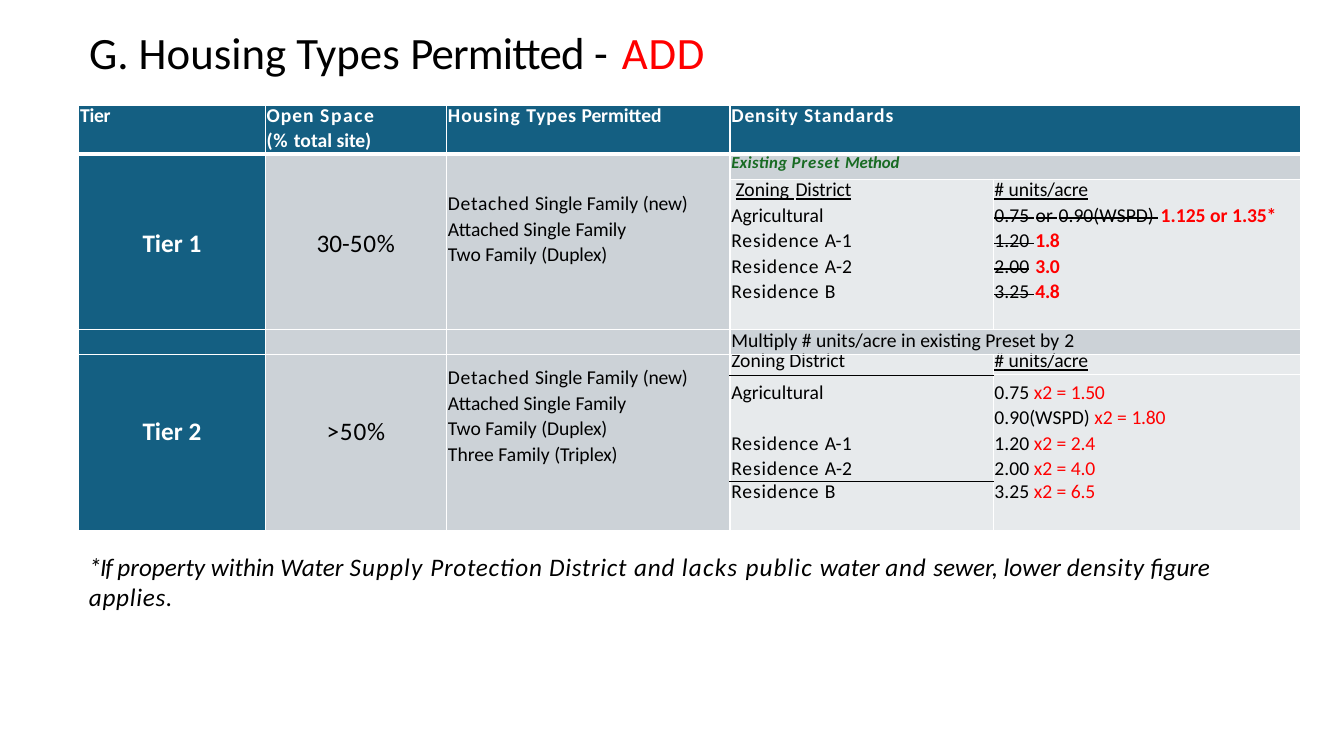
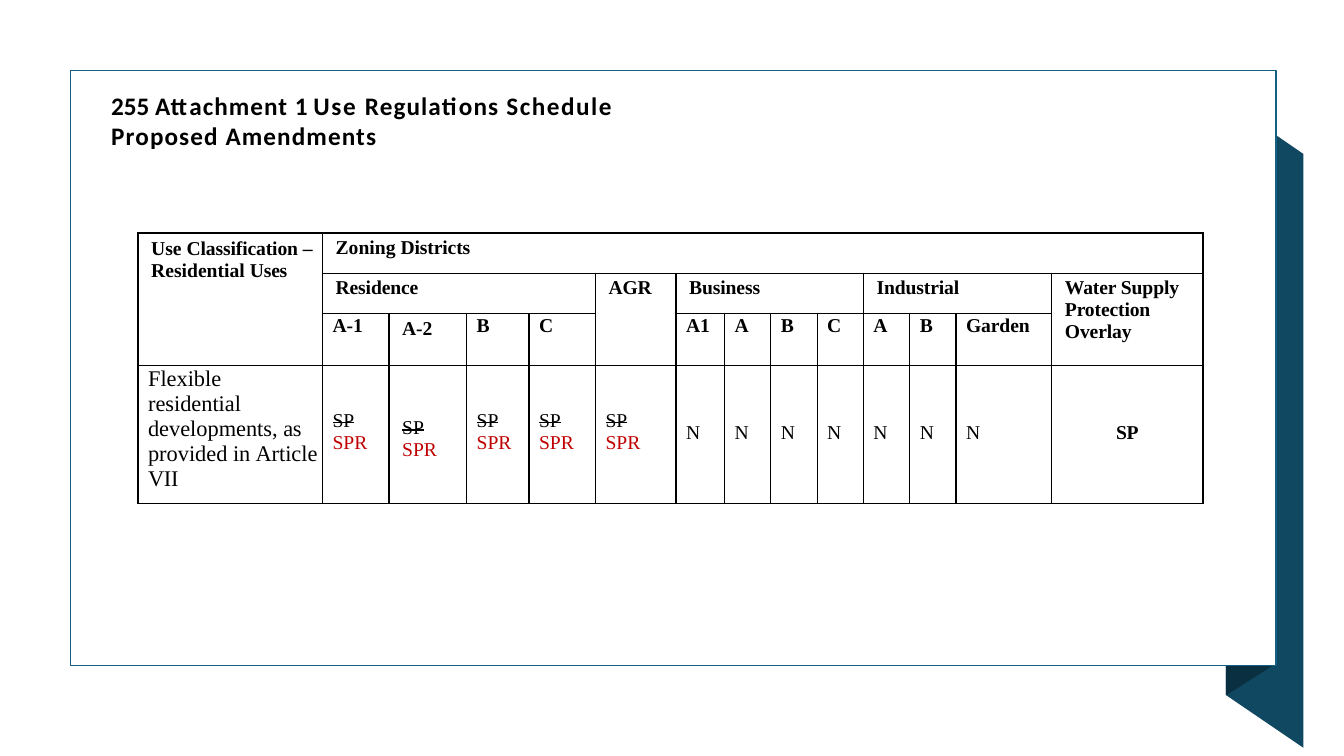
import dataclasses

import lxml.etree
import pptx
import pptx.dml.color
import pptx.enum.shapes
import pptx.enum.text
import pptx.oxml.ns
import pptx.util

Pt = pptx.util.Pt
qn = pptx.oxml.ns.qn


@dataclasses.dataclass(frozen=True)
class Theme:
    sans: str = "Calibri"
    serif: str = "Times New Roman"
    title: int = 32
    heading: int = 18
    label: int = 16
    body: int = 14
    small: int = 12
    black: str = "000000"
    white: str = "FFFFFF"
    red: str = "FF0000"
    crimson: str = "C00000"
    green: str = "186B23"
    teal: str = "145F82"
    ribbon: str = "104761"
    fold: str = "0A2F41"
    gray: str = "CCD2D7"
    pale: str = "E7EAEC"


THEME = Theme()
INKS = {"w": THEME.white, "r": THEME.red, "c": THEME.crimson, "g": THEME.green}


@dataclasses.dataclass
class Cell:
    lines: list
    size: float = THEME.body
    style: str = ""
    left: float = 1
    top: float = 0
    first: float = None
    pitch: float = None
    gap: float = 0
    indent: float = 0
    center: bool = False


def rgb(value):
    return pptx.dml.color.RGBColor.from_string(value)


def add_run(p, text, font, words, spacing=0, style=""):
    style = text.style + style
    r = p.add_run()
    r.text = words
    r.font.name = font
    r.font.size = Pt(text.size)
    r.font.bold = "b" in style
    r.font.italic = "i" in style
    r.font.underline = "u" in style
    r.font.color.rgb = rgb(next((INKS[k] for k in style if k in INKS), THEME.black))
    props = r._r.get_or_add_rPr()
    if spacing:
        props.set("spc", str(round(spacing * 100)))
    if "s" in style:
        props.set("strike", "sngStrike")


def write(tf, text, font):
    for i, line in enumerate(text.lines):
        p = tf.paragraphs[0] if i == 0 else tf.add_paragraph()
        pitch = text.pitch if i else text.first or text.pitch
        if pitch:
            p.line_spacing = Pt(pitch)
        if i == 1 and text.gap:
            p.space_before = Pt(text.gap)
        if i == 0 and text.indent:
            p._p.get_or_add_pPr().set("indent", str(Pt(text.indent)))
        if text.center:
            p.alignment = pptx.enum.text.PP_ALIGN.CENTER
        for run in line:
            add_run(p, text, font, *run)


def text_box(slide, box, text):
    sp = slide.shapes.add_textbox(*(Pt(v) for v in box))
    tf = sp.text_frame
    tf.word_wrap = True
    tf.margin_left, tf.margin_top = Pt(text.left), Pt(text.top)
    tf.margin_right = tf.margin_bottom = 0
    write(tf, text, THEME.sans)


def border(cell, edges):
    props = cell._tc.get_or_add_tcPr()
    for i, (side, (color, width)) in enumerate(zip("LRTB", edges)):
        ln = lxml.etree.Element(qn("a:ln" + side), w=str(Pt(width)))
        if width:
            fill = lxml.etree.SubElement(ln, qn("a:solidFill"))
            lxml.etree.SubElement(fill, qn("a:srgbClr"), val=color)
        else:
            lxml.etree.SubElement(ln, qn("a:noFill"))
        props.insert(i, ln)


def add_table(slide, left, top, widths, heights, cells, spans, font, fill, side, edge):
    table = slide.shapes.add_table(len(heights), len(widths), Pt(left), Pt(top),
                                   Pt(sum(widths)), Pt(sum(heights))).table
    table.first_row = table.horz_banding = False
    for col, width in zip(table.columns, widths):
        col.width = Pt(width)
    for row, height in zip(table.rows, heights):
        row.height = Pt(height)
    for (r, c), (down, across) in spans.items():
        table.cell(r, c).merge(table.cell(r + down - 1, c + across - 1))
    for r in range(len(heights)):
        for c in range(len(widths)):
            cell = table.cell(r, c)
            text = cells.get((r, c), Cell([]))
            cell.margin_left, cell.margin_top = Pt(text.left), Pt(text.top)
            cell.margin_right = cell.margin_bottom = 0
            color = fill(r, c)
            if color:
                cell.fill.solid()
                cell.fill.fore_color.rgb = rgb(color)
            else:
                cell.fill.background()
            down = spans.get((r, c), (1, 1))[0]
            border(cell, (side, side, edge(r, c), edge(r + down, c)))
            if text.lines:
                write(cell.text_frame, text, font)
            else:
                p = cell.text_frame.paragraphs[0]
                lxml.etree.SubElement(p._p, qn("a:endParaRPr"), sz="800")


def density_fill(r, c):
    if r == 0 or c == 0:
        return THEME.teal
    return THEME.gray if c < 3 or r in (1, 3) else THEME.pale


def density_edge(r, c):
    if r == 1:
        return THEME.white, 3
    if c == 3 and r in (5, 6):
        return THEME.black, 0.5
    return THEME.white, 0 if r == 6 else 1


def density_table(slide, left, top):
    exact, pitch = 16.2, 18.2
    detached = [("Detached ", 0.5), ("Single Family ",), ("(new)", -0.2)]
    attached = [("Attached Single ",), ("Family", -0.1)]
    duplex = [("Two Family ",), ("(Duplex)", -0.1)]
    triplex = [("Three Family ",), ("(Triplex)", -0.1)]
    res_a1 = [("Residence ", 0.6), ("A-", -0.3), ("1", -0.5)]
    res_a2 = [("Residence ", 0.6), ("A-",), ("2", -0.5)]
    res_b = [("Residence ", 0.6), ("B", 0.3)]
    units = [("# ", 0, "u"), ("units/acre", -0.1, "u")]

    def raised(old, new, gap="s"):
        return [(old, 0, "s"), (" ", 1.1, gap), (new, -0.2, "rb")]

    def doubled(old, new):
        return [(old + " ",), ("x2 = ", 0, "r"), (new, -0.2, "r")]

    heads = [
        [[("Tier", -0.2)]],
        [[("Open ", 0.7), ("Space", 1.1)], [("(% ", 0.6), ("total ",), ("site)", -0.1)]],
        [[("Housing ", 0.7), ("Types", 0.6), (" Permitted", -0.1)]],
        [[("Density ", 0.6), ("Standards", 0.7)]],
    ]
    cells = {(0, c): Cell(lines, style="wb", first=exact, pitch=pitch)
             for c, lines in enumerate(heads)}
    for r, number, share, drop in ((1, "1", [("30-",), ("50%", 0.6)], 53.2),
                                   (4, "2", [(">50%", 0.6)], 44.4)):
        cells[r, 0] = Cell([[("Tier ",), (number, -0.5)]], THEME.heading, "wb",
                           left=0, top=drop, center=True)
        cells[r, 1] = Cell([share], THEME.heading, left=0, top=drop, center=True)
    cells.update({
        (1, 2): Cell([detached, attached, duplex], top=26, pitch=pitch),
        (1, 3): Cell([[("Existing ", 0.2), ("Preset ", 0.6), ("Method", -0.1)]],
                     THEME.small, "gbi", pitch=13.9),
        (2, 3): Cell([[("Zoning", 0, "u"), (" ", 1.4, "u"), ("District", -0.1, "u")],
                      [("Agricultural",)], res_a1, res_a2, res_b],
                     first=exact, pitch=pitch, indent=3),
        (2, 4): Cell([units,
                      [("0.75", 0, "s"), (" ", 1.4, "s"), ("or", 0, "s"), (" ", 0.9, "s"),
                       ("0.90(WSPD)", 0, "s"), (" ", 1.5, "s"),
                       ("1.125 or ", 0, "rb"), ("1.35*", -0.1, "rb")],
                      raised("1.20", "1.8"), raised("2.00", "3.0", ""),
                      raised("3.25", "4.8")], first=exact, pitch=pitch),
        (3, 3): Cell([[("Multiply # units/acre in existing Preset by ",), ("2", -0.5)]],
                     pitch=exact),
        (4, 2): Cell([detached, attached, duplex, triplex], top=7.2, pitch=pitch),
        (4, 3): Cell([[("Zoning ",), ("District", -0.1)]], pitch=13.3),
        (4, 4): Cell([units], pitch=13.3),
        (5, 3): Cell([[("Agricultural",)], res_a1, res_a2], top=3, pitch=pitch, gap=pitch),
        (5, 4): Cell([doubled("0.75", "1.50"), doubled("0.90(WSPD)", "1.80"),
                      doubled("1.20", "2.4"), doubled("2.00", "4.0")],
                     top=3, pitch=pitch),
        (6, 3): Cell([res_b], pitch=16.4),
        (6, 4): Cell([doubled("3.25", "6.5")], pitch=16.4),
    })
    spans = {(r, c): (2, 1) for r in (1, 4) for c in range(3)}
    spans.update({(r, 3): (1, 2) for r in (0, 1, 3)})
    add_table(slide, left, top, [133.2, 129.6, 202.4, 188, 219.6],
              [35, 18, 107.4, 17.8, 14.6, 75.4, 35.2], cells, spans, THEME.sans,
              density_fill, (THEME.white, 1), density_edge)


def use_table(slide, left, top):
    wide, narrow = 9.4, 7.2
    cells = {
        (0, 0): Cell([[("Use ",), ("Classification ", -0.1), ("– Residential ",),
                       ("Uses", -0.2)]], style="b", left=wide, top=3.6),
        (0, 1): Cell([[("Zoning ",), ("Districts", -0.1)]], style="b", left=wide, top=3),
        (3, 0): Cell([[("Flexible",)],
                      [("residential developments, ",), ("as ", -0.2), ("provided ",),
                       ("in ", -0.2), ("Article ",), ("VII", -0.2)]],
                     THEME.label, left=narrow, first=18.4),
        (3, 13): Cell([[("SP", -0.2)]], style="b", left=0, top=40.4, center=True),
    }
    groups = {1: "Residence", 5: "AGR", 6: "Business", 10: "Industrial",
              13: "Water Supply Protection Overlay"}
    for c, name in groups.items():
        cells[1, c] = Cell([[(name, -0.1)]], style="b", left=wide, top=3)
    names = ["A-1", "A-2", "B", "C", None, "A1", "A", "B", "C", "A", "B", "Garden"]
    for c, name in enumerate(names, 1):
        shifted = c == 2
        left_inset = wide if shifted else narrow
        if name:
            cells[2, c] = Cell([[(name, -0.1)]], style="b", left=left_inset,
                               top=3 if shifted else 0, pitch=None if shifted else 16.2)
        if c < 6:
            cells[3, c] = Cell([[("SP", 0, "s")], [("SPR", 0, "c")]], left=left_inset,
                               top=37 if shifted else 32)
        else:
            cells[3, c] = Cell([[("N",)]], left=left_inset, top=40.4)
    spans = {(0, 0): (3, 1), (0, 1): (1, 13), (1, 1): (1, 4), (1, 5): (2, 1),
             (1, 6): (1, 4), (1, 10): (1, 3), (1, 13): (2, 1)}
    line = (THEME.black, 1)
    add_table(slide, left, top,
              [131.8, 47.5, 55.4, 44.6, 47.5, 57.6, 34.6] + [33.1] * 5 + [68.4, 108],
              [28.8, 28.8, 36.7, 98.6], cells, spans, THEME.serif,
              lambda r, c: None, line, lambda r, c: line)


def panel(slide, x, y, w, h):
    right, bottom = x + w, y + h
    inner, outer = right - 36, right + 19.5
    ribbon = [(inner, y + 21.6), (inner, bottom + 21.2),
              (outer, bottom + 59), (outer, y + 59.6)]
    fold = [(right - 3, y), (inner, y + 21.6), (inner, bottom + 21.6), (right - 3, bottom + 0.6)]
    shapes = []
    for points, color in ((ribbon, THEME.ribbon), (fold, THEME.fold)):
        start, *rest = [(Pt(a), Pt(b)) for a, b in points]
        builder = slide.shapes.build_freeform(*start, scale=1.0)
        builder.add_line_segments(rest, close=True)
        shapes.append((builder.convert_to_shape(), color))
    sp = slide.shapes.add_shape(pptx.enum.shapes.MSO_SHAPE.RECTANGLE,
                                Pt(x), Pt(y), Pt(w), Pt(h))
    for shape, color in shapes + [(sp, THEME.white)]:
        shape.shadow.inherit = False
        shape.fill.solid()
        shape.fill.fore_color.rgb = rgb(color)
        shape.line.fill.background()
    sp.line.color.rgb = rgb(THEME.teal)
    sp.line.width = Pt(1)


def housing_slide(slide):
    text_box(slide, (62.6, 15.8, 480, 45), Cell(
        [[("G. Housing Types ",), ("Permitted ", -0.6), ("- ", 1.4), ("ADD", 0.5, "r")]],
        THEME.title, top=1.6))
    density_table(slide, 56.2, 75)
    text_box(slide, (62.6, 392.4, 805.6, 45), Cell(
        [[("*If ", -0.9), ("property within Water ",), ("Supply ", 0.8),
          ("Protection District ", 0.5), ("and ", 0.6), ("lacks ", 0.9), ("public ", 0.8),
          ("water ",), ("and ", 0.6), ("sewer, lower ",), ("density", 0.5),
          (" figure ", -0.1), ("applies.", 0.5)]], THEME.heading, "i", top=1.6))


def schedule_slide(slide):
    panel(slide, 50.4, 50.4, 861.2, 424.8)
    use_table(slide, 98.6, 166.4)
    text_box(slide, (78.4, 62.6, 400, 46), Cell(
        [[("255 ",), ("Attachment ", 0.7), ("1 ",), ("Use ", 1.2), ("Regulations ", 0.8),
          ("Schedule", 1.1)], [("Proposed Amendments", 0.8)]],
        THEME.heading, "b", top=1.6))


def main():
    prs = pptx.Presentation()
    prs.slide_width, prs.slide_height = Pt(960), Pt(540)
    for build in (housing_slide, schedule_slide):
        build(prs.slides.add_slide(prs.slide_layouts[6]))
    prs.save("out.pptx")


if __name__ == "__main__":
    main()
